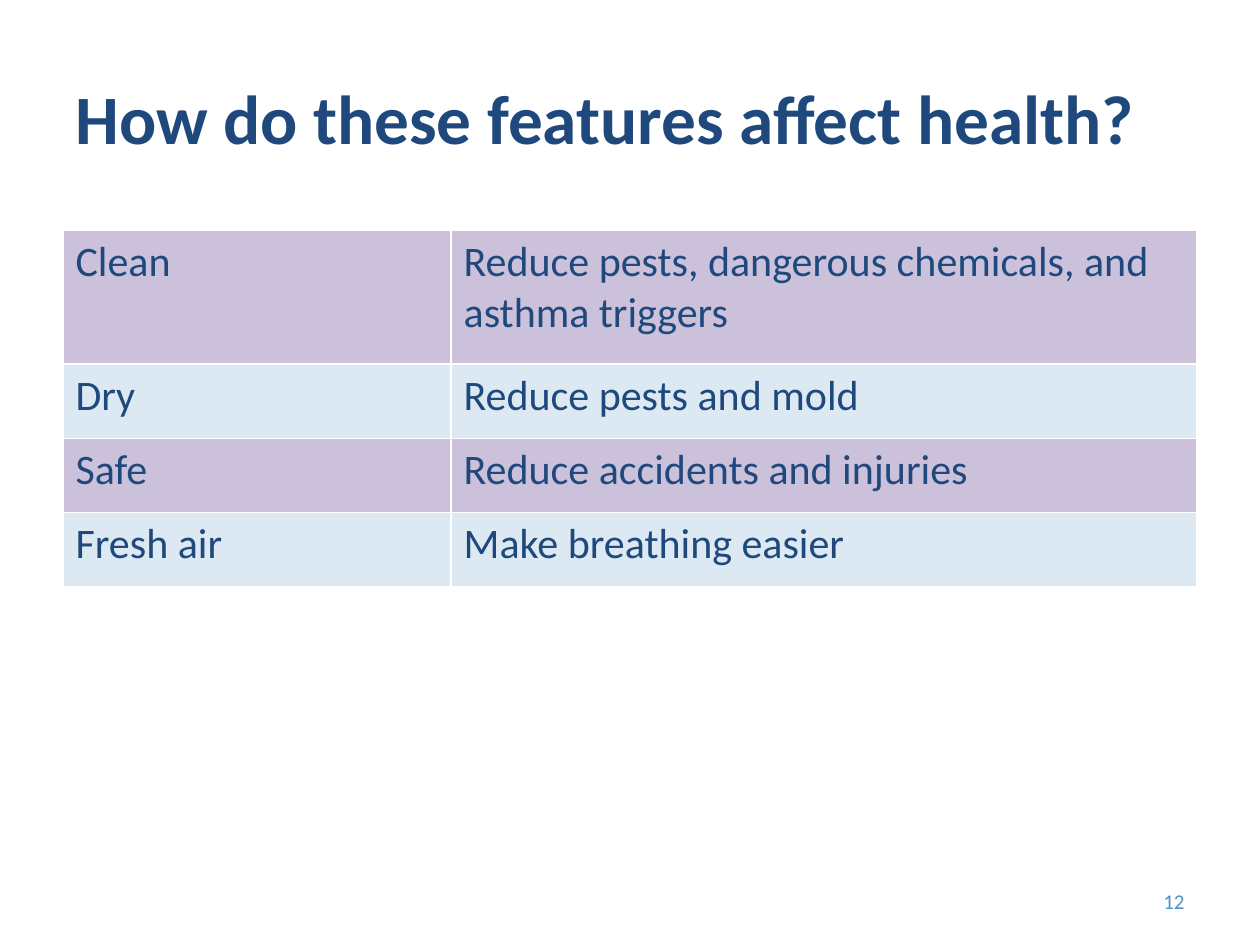
"""Build the slide on how home features affect health."""
import lxml.etree
import pptx
import pptx.dml.color
import pptx.enum.text
import pptx.oxml.ns
import pptx.util

Inches = pptx.util.Inches
Pt = pptx.util.Pt
RGBColor = pptx.dml.color.RGBColor
Align = pptx.enum.text.PP_ALIGN
qn = pptx.oxml.ns.qn

NAVY = RGBColor(0x1F, 0x49, 0x7D)
BLUE = RGBColor(0x4F, 0x91, 0xC0)
LILAC = RGBColor(0xCC, 0xC1, 0xDA)
PALE_BLUE = RGBColor(0xDC, 0xE9, 0xF2)
WHITE = RGBColor(0xFF, 0xFF, 0xFF)
FONT = "Calibri"

FEATURES = [
    ("Clean", "Reduce pests, dangerous chemicals, and asthma triggers"),
    ("Dry", "Reduce pests and mold"),
    ("Safe", "Reduce accidents and injuries"),
    ("Fresh air", "Make breathing easier"),
]
COL_WIDTHS = [3.08, 5.92]
ROW_HEIGHTS = [1.06, 0.59, 0.59, 0.59]


def set_font(p, size, color, bold=False):
    p.font.name = FONT
    p.font.size = Pt(size)
    p.font.bold = bold
    p.font.color.rgb = color


def add_text(slide, box, text, size, color, bold=False, align=Align.LEFT):
    sp = slide.shapes.add_textbox(*map(Inches, box))
    tf = sp.text_frame
    tf.word_wrap = True
    tf.vertical_anchor = pptx.enum.text.MSO_ANCHOR.MIDDLE
    p = tf.paragraphs[0]
    p.text = text
    p.alignment = align
    set_font(p, size, color, bold)


def set_borders(cell, color, width):
    tc_pr = cell._tc.get_or_add_tcPr()
    for side in ("a:lnL", "a:lnR", "a:lnT", "a:lnB"):
        ln = lxml.etree.SubElement(tc_pr, qn(side), w=str(Pt(width)))
        fill = lxml.etree.SubElement(ln, qn("a:solidFill"))
        lxml.etree.SubElement(fill, qn("a:srgbClr"), val=str(color))


def fill_cell(cell, text, color):
    set_borders(cell, WHITE, 1)
    cell.fill.solid()
    cell.fill.fore_color.rgb = color
    p = cell.text_frame.paragraphs[0]
    p.text = text
    set_font(p, 24, NAVY)


def add_feature_table(slide, left, top):
    table = slide.shapes.add_table(
        len(FEATURES), len(COL_WIDTHS), Inches(left), Inches(top),
        Inches(sum(COL_WIDTHS)), Inches(sum(ROW_HEIGHTS))).table
    table.first_row = False
    table.horz_banding = False
    for column, width in zip(table.columns, COL_WIDTHS):
        column.width = Inches(width)
    for i, (row, height) in enumerate(zip(table.rows, ROW_HEIGHTS)):
        row.height = Inches(height)
        for cell, text in zip(row.cells, FEATURES[i]):
            fill_cell(cell, text, PALE_BLUE if i % 2 else LILAC)


def main():
    prs = pptx.Presentation()
    prs.slide_width = Inches(10)
    prs.slide_height = Inches(7.5)
    slide = prs.slides.add_slide(prs.slide_layouts[6])
    add_text(slide, (0.5, 0.3, 9, 1.25), "How do these features affect health?",
             39.6, NAVY, bold=True)
    add_feature_table(slide, 0.5, 1.83)
    add_text(slide, (7.17, 6.95, 2.33, 0.4), "12", 12, BLUE, align=Align.RIGHT)
    prs.save("out.pptx")


if __name__ == "__main__":
    main()
